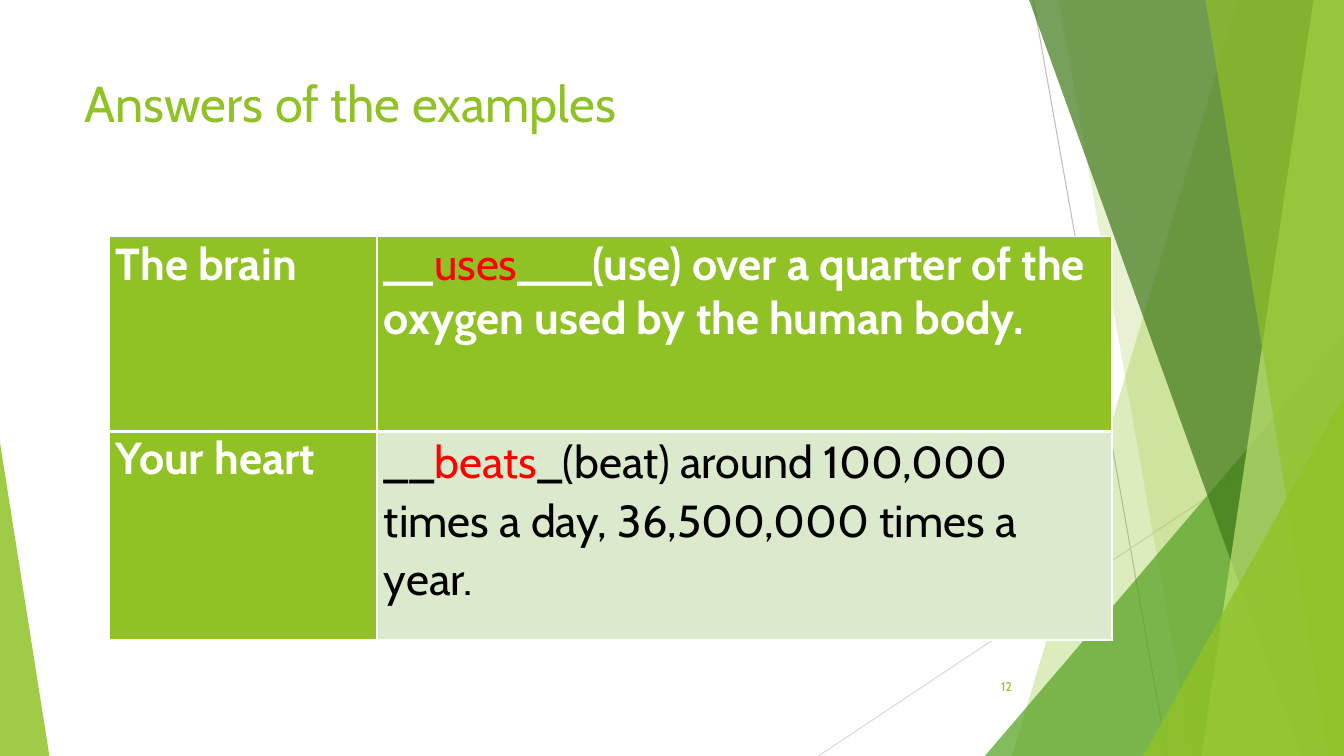
"""Build the answers slide with its green facets and table."""
from dataclasses import dataclass

from lxml.etree import SubElement
from pptx import Presentation
from pptx.dml.color import RGBColor
from pptx.enum.shapes import MSO_CONNECTOR, MSO_SHAPE
from pptx.enum.text import MSO_ANCHOR, PP_ALIGN
from pptx.oxml.ns import qn
from pptx.shapes.autoshape import Shape
from pptx.slide import Slide
from pptx.table import _Cell
from pptx.text.text import _Run
from pptx.util import Pt

WIDE, HIGH = 960, 540
FONT = "Cabin"
GREEN, WHITE, RED, BLACK = "90C226", "FFFFFF", "FF0000", "000000"


@dataclass
class Rule:
    start: tuple[float, float]
    end: tuple[float, float]
    color: str


@dataclass
class Wedge:
    top: float
    foot: float
    color: str
    alpha: int


@dataclass
class Corner:
    left: float
    top: float
    width: float
    apex: int
    color: str
    alpha: int


@dataclass
class Piece:
    text: str
    color: str
    bold: bool = False


@dataclass
class Entry:
    pieces: list[Piece]
    fill: str
    space: float = 1.0
    after: float = 0


RULES = [
    Rule((738, 0), (833.8, HIGH), "BFBFBF"),
    Rule((WIDE, 290.2), (584.6, HIGH), "D9D9D9"),
]
FACETS = [
    Wedge(884.2, 722.9, GREEN, 30),
    Wedge(756, 851.8, GREEN, 20),
    Corner(703.5, 239.8, 256.5, 1, "54A021", 72),
    Wedge(735.1, 929.5, "3F7819", 70),
    Wedge(938.2, 858.2, "C0E474", 70),
    Wedge(861.1, 949, GREEN, 65),
    Corner(816.5, 283, 143.5, 1, GREEN, 80),
    Corner(0, 316.1, 35.3, 0, GREEN, 85),
]
WIDTHS = [191.5, 525]
HEIGHTS = [139, 149]
ROWS = [
    [
        Entry([Piece("The brain", WHITE, True)], GREEN),
        Entry([
            Piece("__", WHITE, True),
            Piece("uses", RED),
            Piece("___(use) over a quarter of the oxygen used by the human body.", WHITE, True),
        ], GREEN),
    ],
    [
        Entry([Piece("Your heart", WHITE, True)], GREEN),
        Entry([
            Piece("__", BLACK),
            Piece("beats", RED),
            Piece("_(beat) around 100,000 times a day, 36,500,000 times a year.", BLACK),
        ], "DBE9CD", 1.07, 8),
    ],
]


def tint(code: str) -> RGBColor:
    """Turn a hex string into a colour."""
    return RGBColor.from_string(code)


def style(run: _Run, size: float, color: str, bold: bool = False) -> None:
    """Set the font of a run."""
    run.font.name = FONT
    run.font.size = Pt(size)
    run.font.bold = bold
    run.font.color.rgb = tint(color)


def draw_rule(slide: Slide, rule: Rule) -> None:
    """Draw one thin line."""
    line = slide.shapes.add_connector(
        MSO_CONNECTOR.STRAIGHT, *map(Pt, rule.start + rule.end))
    line.line.color.rgb = tint(rule.color)
    line.line.width = Pt(0.75)
    SubElement(line.element.spPr, qn("a:effectLst"))


def make_wedge(slide: Slide, wedge: Wedge) -> Shape:
    """Outline a facet that reaches the right edge."""
    pen = slide.shapes.build_freeform(Pt(wedge.top), 0)
    points = [(WIDE, 0), (WIDE, HIGH), (wedge.foot, HIGH)]
    pen.add_line_segments([(Pt(x), Pt(y)) for x, y in points], close=True)
    return pen.convert_to_shape()


def make_corner(slide: Slide, corner: Corner) -> Shape:
    """Add a triangle that stands on the bottom edge."""
    shape = slide.shapes.add_shape(
        MSO_SHAPE.ISOSCELES_TRIANGLE, Pt(corner.left), Pt(corner.top),
        Pt(corner.width), Pt(HIGH - corner.top))
    shape.adjustments[0] = corner.apex
    return shape


def draw_facet(slide: Slide, facet: Wedge | Corner) -> None:
    """Draw one see-through facet."""
    make = make_wedge if isinstance(facet, Wedge) else make_corner
    shape = make(slide, facet)
    shape.shadow.inherit = False
    shape.line.fill.background()
    shape.fill.solid()
    shape.fill.fore_color.rgb = tint(facet.color)
    color = shape.element.spPr.find(qn("a:solidFill")).find(qn("a:srgbClr"))
    SubElement(color, qn("a:alpha"), val=str(facet.alpha * 1000))


def draw_text(slide: Slide, text: str, box: tuple[float, ...], size: float,
              align: PP_ALIGN, anchor: MSO_ANCHOR) -> None:
    """Add a green text box."""
    frame = slide.shapes.add_textbox(*map(Pt, box)).text_frame
    frame.word_wrap = True
    frame.vertical_anchor = anchor
    frame.text = text
    frame.paragraphs[0].alignment = align
    style(frame.paragraphs[0].runs[0], size, GREEN)


def edge_cell(cell: _Cell, top: float, base: float) -> None:
    """Give a cell white borders."""
    props = cell._tc.get_or_add_tcPr()
    for side, width in zip("LRTB", (1, 1, top, base)):
        line = SubElement(props, qn(f"a:ln{side}"), w=str(Pt(width)))
        fill = SubElement(line, qn("a:solidFill"))
        SubElement(fill, qn("a:srgbClr"), val=WHITE)


def fill_cell(cell: _Cell, entry: Entry) -> None:
    """Write and colour one cell."""
    cell.fill.solid()
    cell.fill.fore_color.rgb = tint(entry.fill)
    cell.margin_left = cell.margin_right = Pt(5)
    cell.margin_top = cell.margin_bottom = 0
    para = cell.text_frame.paragraphs[0]
    para.line_spacing = entry.space
    para.space_after = Pt(entry.after)
    for piece in entry.pieces:
        run = para.add_run()
        run.text = piece.text
        style(run, 32, piece.color, piece.bold)


def draw_table(slide: Slide) -> None:
    """Add the table of answers."""
    table = slide.shapes.add_table(
        len(ROWS), len(WIDTHS), Pt(77.8), Pt(169.2),
        Pt(sum(WIDTHS)), Pt(sum(HEIGHTS))).table
    table.first_row = table.horz_banding = False
    for column, width in zip(table.columns, WIDTHS):
        column.width = Pt(width)
    for r, (height, row) in enumerate(zip(HEIGHTS, ROWS)):
        table.rows[r].height = Pt(height)
        for c, entry in enumerate(row):
            cell = table.cell(r, c)
            edge_cell(cell, 3 if r else 1, 1 if r else 3)
            fill_cell(cell, entry)


def main() -> None:
    """Build and save the slide."""
    deck = Presentation()
    deck.slide_width, deck.slide_height = Pt(WIDE), Pt(HIGH)
    slide = deck.slides.add_slide(deck.slide_layouts[6])
    for rule in RULES:
        draw_rule(slide, rule)
    for facet in FACETS:
        draw_facet(slide, facet)
    draw_text(slide, "Answers of the examples", (53.3, 48, 677, 104), 36,
              PP_ALIGN.LEFT, MSO_ANCHOR.TOP)
    draw_table(slide)
    draw_text(slide, "12", (676, 476, 54, 28.8), 9, PP_ALIGN.RIGHT, MSO_ANCHOR.MIDDLE)
    deck.save("out.pptx")


if __name__ == "__main__":
    main()
